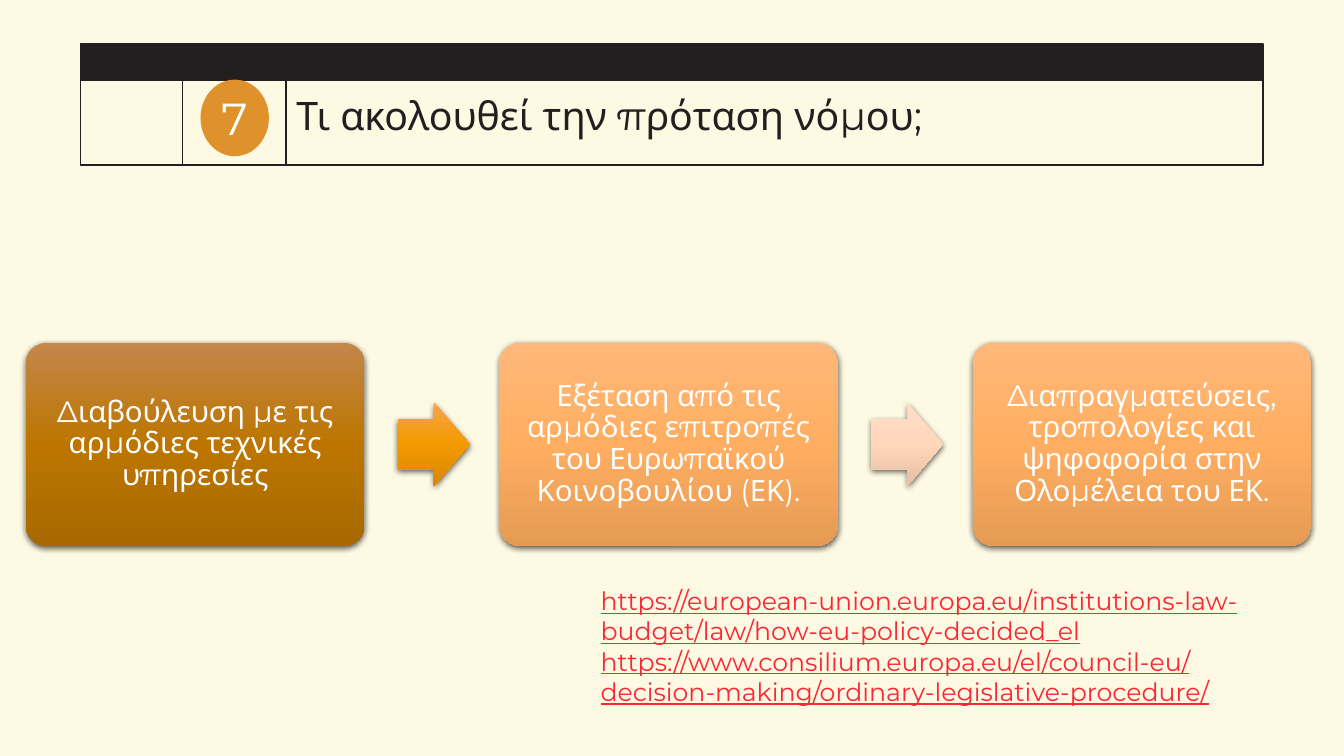
from copy import deepcopy

from pptx import Presentation
from pptx.dml.color import RGBColor
from pptx.enum.shapes import MSO_CONNECTOR, MSO_SHAPE as Shape
from pptx.enum.text import MSO_ANCHOR as Anchor, MSO_AUTO_SIZE as AutoSize, PP_ALIGN as Align
from pptx.oxml import parse_xml
from pptx.oxml.ns import nsdecls, qn
from pptx.util import Pt

CREAM = RGBColor(0xFD, 0xF9, 0xE2)
INK = RGBColor(0x23, 0x1F, 0x20)
WHITE = RGBColor(0xFF, 0xFF, 0xFF)
OCHRE = RGBColor(0xDF, 0x92, 0x2B)
LINK_RED = RGBColor(0xFC, 0x27, 0x34)
BROWN = [RGBColor(0xC4, 0x86, 0x4B), RGBColor(0xBC, 0x76, 0x00), RGBColor(0xA7, 0x69, 0x00)]
PEACH = [RGBColor(0xFF, 0xB8, 0x79), RGBColor(0xFF, 0xAE, 0x61), RGBColor(0xE5, 0x9B, 0x54)]
ORANGE = [RGBColor(0xF8, 0xA4, 0x4B), RGBColor(0xF3, 0x99, 0x00), RGBColor(0xD8, 0x88, 0x00)]
BLUSH = [RGBColor(0xFF, 0xDE, 0xC8), RGBColor(0xFF, 0xD7, 0xBB), RGBColor(0xE5, 0xBE, 0xA4)]

SHADOW = (
    f'<a:effectLst {nsdecls("a")}><a:outerShdw blurRad="57150" dist="19050" dir="5400000" '
    'algn="ctr" rotWithShape="0"><a:srgbClr val="000000"><a:alpha val="63000"/></a:srgbClr>'
    '</a:outerShdw></a:effectLst>'
)


def style_text(para, size, color):
    para.font.name = "Montserrat"
    para.font.size = Pt(size)
    para.font.color.rgb = color


def add_glossy(kind, left, top, width, height, colors):
    shape = page.shapes.add_shape(kind, Pt(left), Pt(top), Pt(width), Pt(height))
    shape.line.fill.background()
    shape.fill.gradient()
    shape.fill.gradient_angle = 270
    stop_list = shape.element.spPr.find(qn("a:gradFill")).find(qn("a:gsLst"))
    stop_list.append(deepcopy(stop_list[-1]))
    for stop, position, color in zip(shape.fill.gradient_stops, (0, 0.5, 1), colors):
        stop.position = position
        stop.color.rgb = color
    shape.element.spPr.append(parse_xml(SHADOW))
    return shape


deck = Presentation()
deck.slide_width, deck.slide_height = Pt(960), Pt(540)
page = deck.slides.add_slide(deck.slide_layouts[5])
page.background.fill.solid()
page.background.fill.fore_color.rgb = CREAM

for top, height, color in [(56.9, 61.2, CREAM), (31.7, 25.2, INK)]:
    band = page.shapes.add_shape(Shape.RECTANGLE, Pt(57.6), Pt(top), Pt(844.6), Pt(height))
    band.shadow.inherit = False
    band.fill.solid()
    band.fill.fore_color.rgb = color
    band.line.color.rgb = INK
    band.line.width = Pt(1.25)

for x in (130.3, 204.5):
    divider = page.shapes.add_connector(MSO_CONNECTOR.STRAIGHT, Pt(x), Pt(56.9), Pt(x), Pt(118.1))
    divider.line.color.rgb = INK
    divider.line.width = Pt(1.25)
    divider.element.spPr.append(parse_xml(f'<a:effectLst {nsdecls("a")}/>'))

title = page.shapes.title
title.element.getparent().append(title.element)
title.left, title.top, title.width, title.height = Pt(204.5), Pt(56.9), Pt(698.4), Pt(54.7)
title.text_frame.text = "Τι ακολουθεί την πρόταση νόμου;"
title.text_frame.auto_size = AutoSize.NONE
title.text_frame.vertical_anchor = Anchor.MIDDLE
para = title.text_frame.paragraphs[0]
para.alignment = Align.LEFT
para.line_spacing = 0.9
style_text(para, 28, INK)

steps = [
    ("Διαβούλευση με τις αρμόδιες τεχνικές υπηρεσίες", BROWN, ORANGE),
    ("Εξέταση από τις αρμόδιες επιτροπές του Ευρωπαϊκού Κοινοβουλίου (ΕΚ).", PEACH, BLUSH),
    ("Διαπραγματεύσεις, τροπολογίες και ψηφοφορία στην Ολομέλεια του ΕΚ.", PEACH, None),
]
for index, (wording, card_colors, arrow_colors) in enumerate(steps):
    left = 18.6 + index * 338.1
    card = add_glossy(Shape.ROUNDED_RECTANGLE, left, 244.9, 241.7, 144.9, card_colors)
    card.adjustments[0] = 0.1
    frame = card.text_frame
    frame.word_wrap = True
    frame.vertical_anchor = Anchor.MIDDLE
    frame.margin_left = frame.margin_right = frame.margin_top = frame.margin_bottom = Pt(6.3)
    frame.text = wording
    para = frame.paragraphs[0]
    para.alignment = Align.CENTER
    para.line_spacing = 0.9
    style_text(para, 21, WHITE)
    if arrow_colors:
        arrow = add_glossy(Shape.RIGHT_ARROW, left + 265.8, 287.4, 51.2, 59.9, arrow_colors)
        arrow.adjustments[0] = 0.6
        arrow.adjustments[1] = 0.5

badge = page.shapes.add_shape(Shape.OVAL, Pt(143.2), Pt(56.9), Pt(48.9), Pt(54.7))
badge.shadow.inherit = False
badge.fill.solid()
badge.fill.fore_color.rgb = OCHRE
badge.line.fill.background()
frame = badge.text_frame
frame.margin_left = frame.margin_right = frame.margin_top = frame.margin_bottom = Pt(0)
frame.vertical_anchor = Anchor.MIDDLE
frame.text = "7"
frame.paragraphs[0].alignment = Align.CENTER
style_text(frame.paragraphs[0], 32, WHITE)

sources = page.shapes.add_textbox(Pt(421.9), Pt(414.7), Pt(481), Pt(120))
sources.text_frame.word_wrap = True
sources.text_frame.text = (
    "https://european-union.europa.eu/institutions-law-budget/law/how-eu-policy-decided_el\n"
    "https://www.consilium.europa.eu/el/council-eu/decision-making/ordinary-legislative-procedure/"
)
for para in sources.text_frame.paragraphs:
    style_text(para, 18, LINK_RED)
    para.font.underline = True

deck.save("out.pptx")
